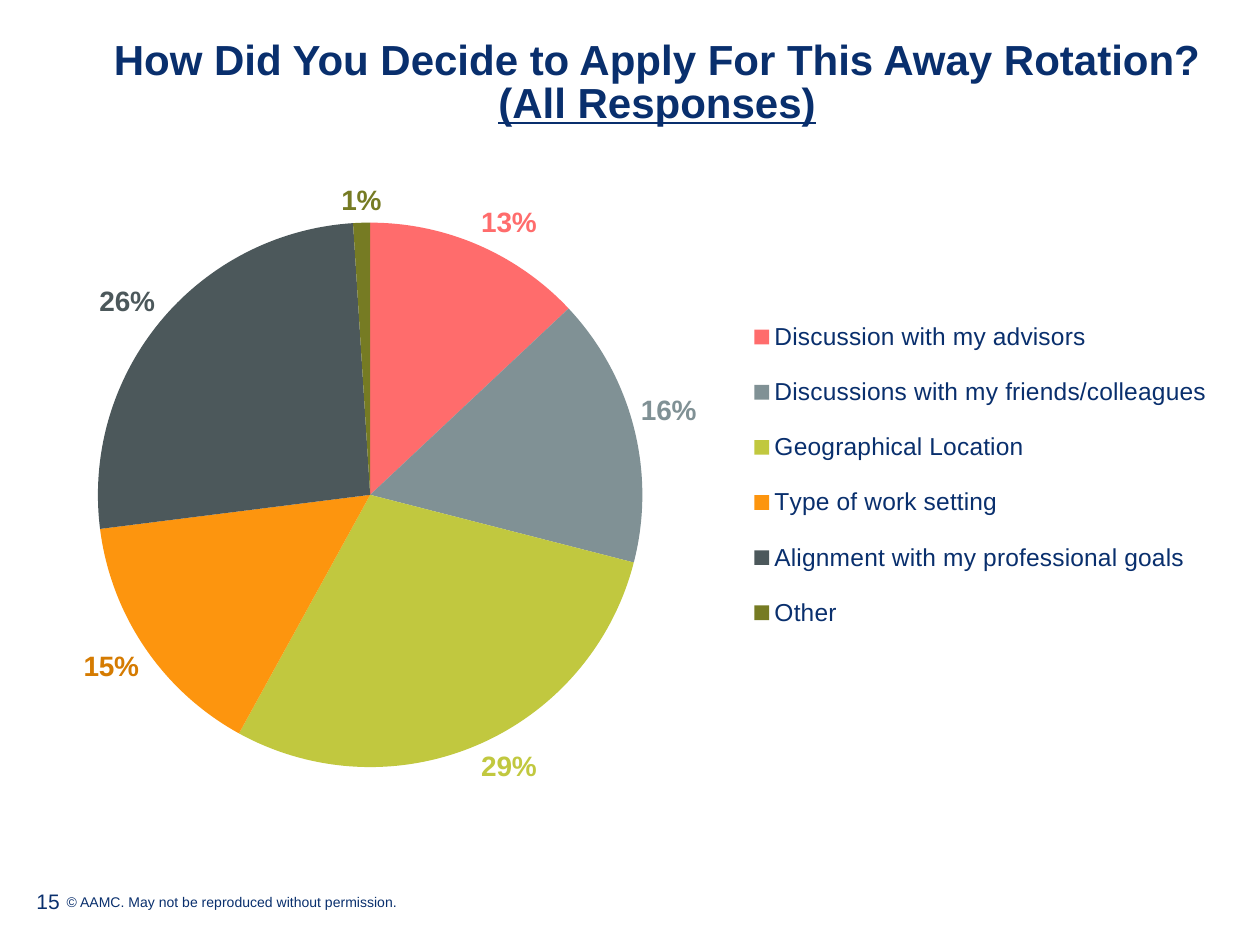
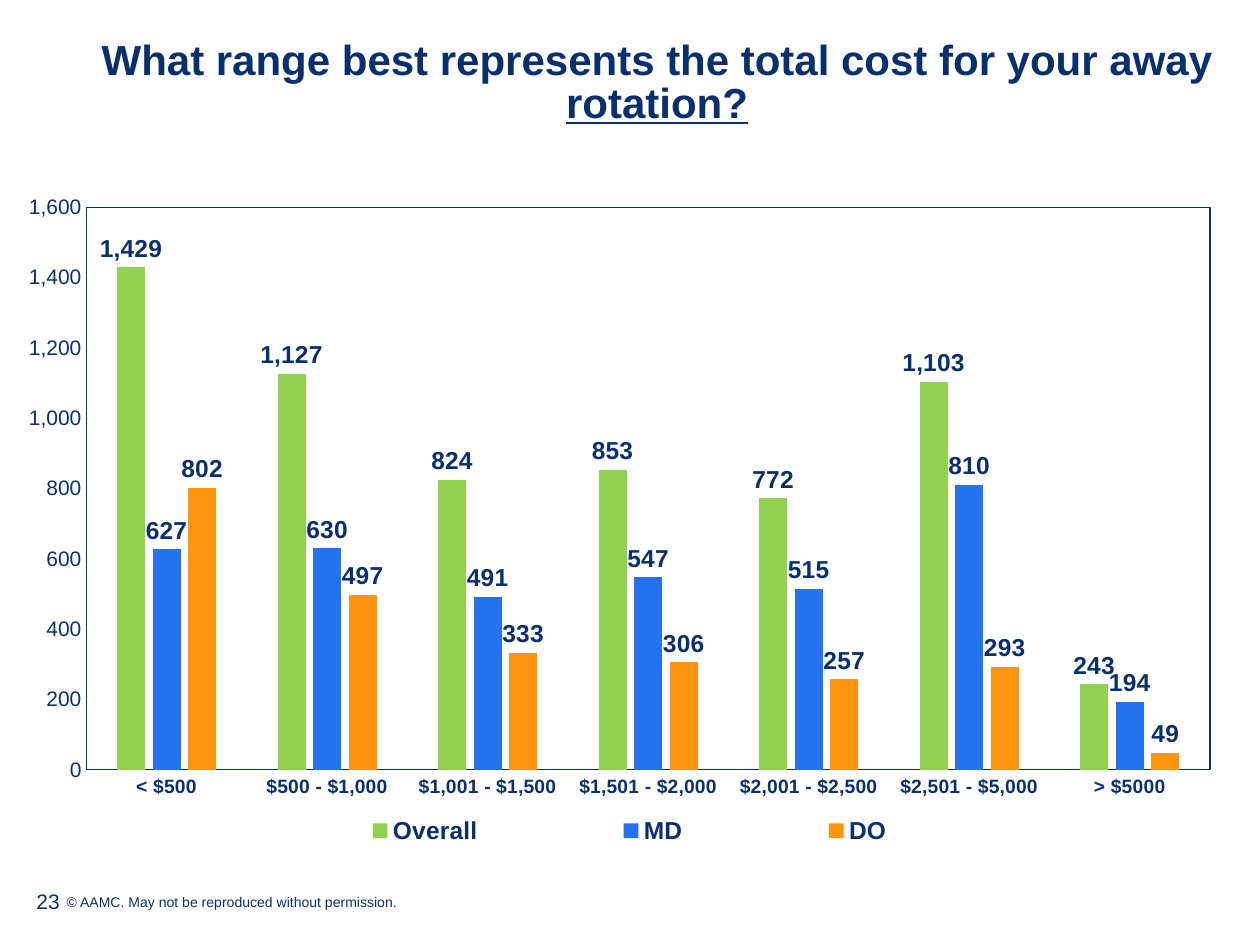
import pptx
import pptx.util
import pptx.chart.data
import pptx.dml.color
import pptx.enum.chart
import pptx.enum.text
import pptx.oxml
import pptx.oxml.ns
from pptx.util import Inches

COLORS = {
    "navy": "092F6D", "coral": "FF6C6C", "slate": "809195", "lime": "C1C83F",
    "orange": "FD950E", "amber": "D57B01", "charcoal": "4C585B",
    "olive": "767B23", "green": "92D050", "blue": "2671ED",
}
FONT = "Arial"
COPYRIGHT = "© AAMC. May not be reproduced without permission."
CHART_TYPE = pptx.enum.chart.XL_CHART_TYPE
LEGEND = pptx.enum.chart.XL_LEGEND_POSITION
OUTSIDE = pptx.enum.chart.XL_LABEL_POSITION.OUTSIDE_END
NO_TICK = pptx.enum.chart.XL_TICK_MARK.NONE
ANCHOR = pptx.enum.text.MSO_ANCHOR
qn = pptx.oxml.ns.qn


def rgb(name):
    return pptx.dml.color.RGBColor.from_string(COLORS[name])


class SurveyDeck:
    """Holds the shared style and the slide being built."""

    def __init__(self):
        self.deck = pptx.Presentation()
        self.deck.slide_width, self.deck.slide_height = Inches(10), Inches(7.5)
        self.page = None

    def style(self, font, size, bold=False, color="navy"):
        font.name, font.size, font.bold = FONT, pptx.util.Pt(size), bold
        font.color.rgb = rgb(color)

    def add_page(self, number, heading, underlined):
        self.page = self.deck.slides.add_slide(self.deck.slide_layouts[5])
        self.add_title(heading, underlined)
        self.add_text(COPYRIGHT, 8, (0.43, 7.04, 8.22, 0.23))
        self.add_text(str(number), 12, (0.19, 6.95, 2.25, 0.4), ANCHOR.MIDDLE)

    def add_title(self, heading, underlined):
        title = self.page.shapes.title
        title.left, title.top = Inches(0.63), Inches(0.33)
        title.width, title.height = Inches(9.17), Inches(0.68)
        frame = title.text_frame
        frame.auto_size = pptx.enum.text.MSO_AUTO_SIZE.NONE
        frame.vertical_anchor = ANCHOR.BOTTOM
        frame.margin_left = frame.margin_right = 0
        frame.margin_top = frame.margin_bottom = 0
        para = frame.paragraphs[0]
        para.alignment = pptx.enum.text.PP_ALIGN.CENTER
        para.line_spacing = 0.85
        for text, underline in ((heading, False), (underlined, True)):
            span = para.add_run()
            span.text = text
            self.style(span.font, 24, bold=True)
            span.font.underline = underline

    def add_text(self, text, size, place, anchor=ANCHOR.TOP):
        box = self.page.shapes.add_textbox(*map(Inches, place))
        box.text_frame.word_wrap = True
        box.text_frame.vertical_anchor = anchor
        span = box.text_frame.paragraphs[0].add_run()
        span.text = text
        self.style(span.font, size)

    def set_layout(self, parent, place, index, inner=False):
        """Fix a chart part at fractions (x, y, w, h) of the chart."""
        for old in parent.findall(qn("c:layout")):
            parent.remove(old)
        target = '<c:layoutTarget val="inner"/>' if inner else ""
        modes = "".join(f'<c:{key}Mode val="edge"/>' for key in "xy")
        sizes = "".join(f'<c:{key} val="{value}"/>' for key, value in zip("xywh", place))
        parent.insert(index, pptx.oxml.parse_xml(
            f'<c:layout {pptx.oxml.ns.nsdecls("c")}><c:manualLayout>'
            f"{target}{modes}{sizes}</c:manualLayout></c:layout>"))

    def add_chart(self, kind, place, categories, series, plot_place,
                  legend_side, legend_place, legend_bold=False):
        data = pptx.chart.data.CategoryChartData()
        data.categories = categories
        for name, values in series:
            data.add_series(name, values)
        chart = self.page.shapes.add_chart(kind, *map(Inches, place), data).chart
        chart.has_title = False
        self.style(chart.font, 10)
        chart.has_legend = True
        chart.legend.position = legend_side
        chart.legend.include_in_layout = False
        self.style(chart.legend.font, 14, legend_bold)
        self.set_layout(chart.legend._element, legend_place, 1)
        self.set_layout(self.plot_area(chart), plot_place, 0, inner=True)
        return chart

    def plot_area(self, chart):
        return chart._chartSpace.find(".//" + qn("c:plotArea"))

    def fill(self, part, color):
        part.format.fill.solid()
        part.format.fill.fore_color.rgb = rgb(color)

    def add_pie(self, place, slices, **layout):
        names, values, colors, label_colors = zip(*slices)
        chart = self.add_chart(CHART_TYPE.PIE, place, names,
                               [("Series 1", values)], **layout)
        plot = chart.plots[0]
        plot.vary_by_categories = True
        for index, (color, label_color) in enumerate(zip(colors, label_colors)):
            point = plot.series[0].points[index]
            self.fill(point, color)
            self.style(point.data_label.font, 16, True, label_color)
            point.data_label.position = OUTSIDE
        # Labels show the share instead of the value
        for label in chart._chartSpace.iter(qn("c:dLbl")):
            label.find(qn("c:showVal")).set("val", "0")
            label.find(qn("c:showPercent")).set("val", "1")

    def add_columns(self, place, categories, series, top, step, **layout):
        chart = self.add_chart(CHART_TYPE.COLUMN_CLUSTERED, place, categories,
                               [entry[:2] for entry in series], **layout)
        plot = chart.plots[0]
        plot.vary_by_categories = False
        plot.gap_width, plot.overlap = 219, -27
        for column, (_, _, color) in zip(plot.series, series):
            self.fill(column, color)
            column.invert_if_negative = False
            labels = column.data_labels
            labels.show_value, labels.position = True, OUTSIDE
            labels.number_format, labels.number_format_is_linked = "#,##0", False
            self.style(labels.font, 14, True)
        # Axes
        for axis, size, bold in ((chart.category_axis, 11, True),
                                 (chart.value_axis, 12, False)):
            axis.major_tick_mark = axis.minor_tick_mark = NO_TICK
            axis.has_major_gridlines = False
            self.style(axis.tick_labels.font, size, bold)
        chart.category_axis.format.line.color.rgb = rgb("navy")
        chart.category_axis.format.line.width = pptx.util.Pt(0.75)
        scale = chart.value_axis
        scale.minimum_scale, scale.maximum_scale, scale.major_unit = 0, top, step
        scale.tick_labels.number_format = "#,##0"
        scale.tick_labels.number_format_is_linked = False
        scale.format.line.fill.background()
        # Frame around the plot
        self.plot_area(chart).append(pptx.oxml.parse_xml(
            f'<c:spPr {pptx.oxml.ns.nsdecls("c", "a")}><a:noFill/><a:ln w="9525">'
            f'<a:solidFill><a:srgbClr val="{COLORS["navy"]}"/></a:solidFill>'
            "</a:ln></c:spPr>"))


def main():
    survey = SurveyDeck()

    # Reasons for applying
    survey.add_page(15, "How Did You Decide to Apply For This Away Rotation? ",
                    "(All Responses)")
    survey.add_pie(
        (-0.31, 1.24, 10.31, 5.27),
        [("Discussion with my advisors", 13, "coral", "coral"),
         ("Discussions with my friends/colleagues", 16, "slate", "slate"),
         ("Geographical Location", 29, "lime", "lime"),
         ("Type of work setting", 15, "orange", "amber"),
         ("Alignment with my professional goals", 26, "charcoal", "charcoal"),
         ("Other", 1, "olive", "olive")],
        plot_place=(0.09, 0.1, 0.45, 0.82),
        legend_side=LEGEND.RIGHT, legend_place=(0.6, 0.21, 0.37, 0.54))

    # Cost of the rotation
    survey.add_page(23, "What range best represents the total cost for your away ",
                    "rotation?")
    survey.add_columns(
        (0, 1.43, 9.8, 5.38),
        ["< $500", "$500 - $1,000", "$1,001 - $1,500", "$1,501 - $2,000",
         "$2,001 - $2,500", "$2,501 - $5,000", "> $5000"],
        [("Overall", (1429, 1127, 824, 853, 772, 1103, 243), "green"),
         ("MD", (627, 630, 491, 547, 515, 810, 194), "blue"),
         ("DO", (802, 497, 333, 306, 257, 293, 49), "orange")],
        top=1600, step=200, plot_place=(0.07, 0.04, 0.91, 0.83),
        legend_side=LEGEND.BOTTOM, legend_place=(0.19, 0.92, 0.64, 0.08),
        legend_bold=True)

    survey.deck.save("out.pptx")


if __name__ == "__main__":
    main()
